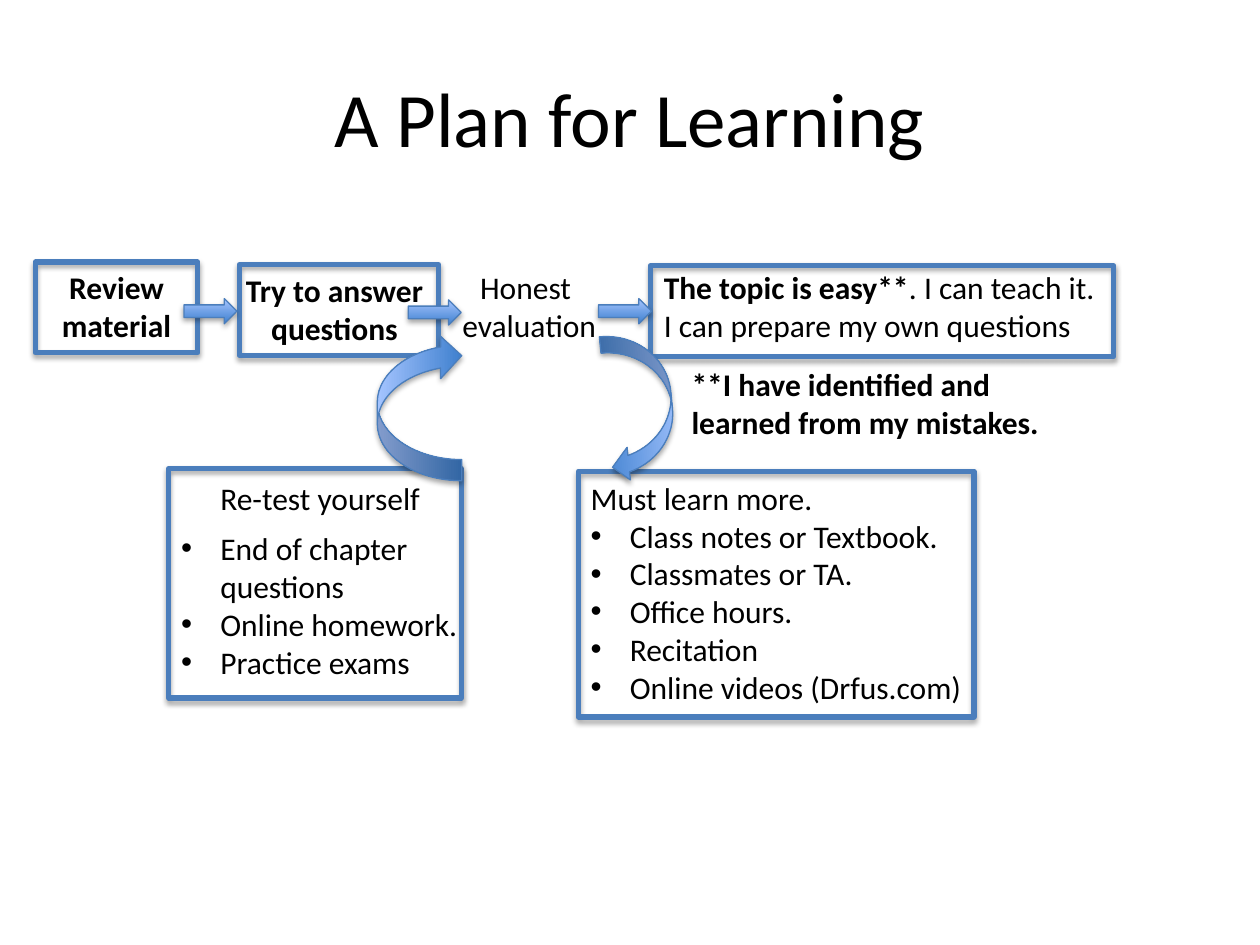
from lxml import etree
from pptx import Presentation
from pptx.dml.color import RGBColor
from pptx.enum.shapes import MSO_SHAPE
from pptx.enum.text import MSO_ANCHOR, MSO_AUTO_SIZE, PP_ALIGN
from pptx.oxml import parse_xml
from pptx.oxml.ns import nsdecls, qn
from pptx.util import Inches, Pt

RECTANGLE = MSO_SHAPE.RECTANGLE
RIGHT_ARROW = MSO_SHAPE.RIGHT_ARROW
CURVED_ARROW = MSO_SHAPE.CURVED_DOWN_ARROW
MIDDLE, TOP = MSO_ANCHOR.MIDDLE, MSO_ANCHOR.TOP
FIT_SHAPE, NO_FIT = MSO_AUTO_SIZE.SHAPE_TO_FIT_TEXT, MSO_AUTO_SIZE.NONE
LEFT, CENTER = PP_ALIGN.LEFT, PP_ALIGN.CENTER

COLORS = {"text": "000000", "line": "4B7EBC", "dark": "3F80CE", "light": "A4C4FF", "shadow": "000000"}
COLUMNS, ROWS = 100, 75
BULLET = "•"
HANGING = Inches(0.31)

deck = Presentation()
deck.slide_width, deck.slide_height = Inches(10), Inches(7.5)
column, row = deck.slide_width / COLUMNS, deck.slide_height / ROWS
page = deck.slides.add_slide(deck.slide_layouts[6])


def on_grid(left, top, width, height):
    return round(left * column), round(top * row), round(width * column), round(height * row)


def add_styled_shape(kind, place, line_width, gradient=False, rotation=0):
    shape = page.shapes.add_shape(kind, *on_grid(*place))
    shape.rotation = rotation
    shape.line.color.rgb = RGBColor.from_string(COLORS["line"])
    shape.line.width = Pt(line_width)
    if gradient:
        shape.fill.gradient()
        shape.fill.gradient_angle = 90
        for stop, name in zip(shape.fill.gradient_stops, ("dark", "light")):
            stop.color.rgb = RGBColor.from_string(COLORS[name])
    else:
        shape.fill.background()
    shape._element.spPr.append(parse_xml(
        f'<a:effectLst {nsdecls("a")}>'
        f'<a:outerShdw blurRad="{Pt(3.1)}" dist="{Pt(1.8)}" dir="5400000" rotWithShape="0">'
        f'<a:srgbClr val="{COLORS["shadow"]}"><a:alpha val="35000"/></a:srgbClr>'
        '</a:outerShdw></a:effectLst>'))


# Each text: place, frame format, alignment, size, paragraphs of (wording, bold) spans.
wrapped = {"word_wrap": True, "auto_size": FIT_SHAPE, "vertical_anchor": TOP}
unwrapped = {**wrapped, "word_wrap": False}
title_frame = {"word_wrap": True, "auto_size": NO_FIT, "vertical_anchor": MIDDLE}
texts = [
    ((5, 3, 90, 12.5), title_frame, CENTER, 44, [[("A Plan for Learning", False)]]),
    ((2.8, 20.8, 12.9, 7.1), wrapped, CENTER, 18, [[("Review material", True)]]),
    ((17.8, 21, 17.5, 7.1), wrapped, CENTER, 18, [[("Try to answer questions", True)]]),
    ((35.6, 20.8, 12.8, 7.1), unwrapped, CENTER, 18,
     [[("Honest ", False)], [("evaluation", False)]]),
    ((51.7, 20.8, 36.7, 7.1), unwrapped, LEFT, 18,
     [[("The topic is easy**", True), (". I can teach it.", False)],
      [("I can prepare my own questions", False)]]),
    ((53.9, 28.5, 32.7, 7.1), wrapped, LEFT, 18,
     [[("**I have identified and learned from my mistakes.", True)]]),
    ((16.5, 37.5, 20.1, 4), wrapped, LEFT, 18, [[("Re-test yourself", False)]]),
    ((13.4, 41.5, 26.3, 13.1), wrapped, LEFT, 18,
     [[(BULLET + "End of chapter questions", False)],
      [(BULLET + "Online homework.", False)],
      [(BULLET + "Practice exams", False)]]),
    ((45.9, 37.5, 31.6, 19.2), unwrapped, LEFT, 18,
     [[("Must learn more.", False)],
      [(BULLET + "Class notes or Textbook.", False)],
      [(BULLET + "Classmates or TA.", False)],
      [(BULLET + "Office hours.", False)],
      [(BULLET + "Recitation", False)],
      [(BULLET + "Online videos (Drfus.com)", False)]]),
]
for place, frame_format, alignment, size, paragraphs in texts:
    frame = page.shapes.add_textbox(*on_grid(*place)).text_frame
    for name, value in frame_format.items():
        setattr(frame, name, value)
    for index, spans in enumerate(paragraphs):
        para = frame.add_paragraph() if index else frame.paragraphs[0]
        para.alignment = alignment
        if spans[0][0].startswith(BULLET):
            properties = para._p.get_or_add_pPr()
            properties.set("marL", str(HANGING))
            properties.set("indent", str(-HANGING))
            etree.SubElement(properties, qn("a:buFont")).set("typeface", "Arial")
            etree.SubElement(properties, qn("a:buChar")).set("char", BULLET)
        for wording, bold in spans:
            span = para.add_run()
            span.text = wording.removeprefix(BULLET)
            for name, value in {"name": "Calibri", "size": Pt(size), "bold": bold}.items():
                setattr(span.font, name, value)
            span.font.color.rgb = RGBColor.from_string(COLORS["text"])

frames = [
    (2.8, 20.8, 12.9, 7.2),
    (19, 21, 15.8, 7.2),
    (51.6, 21.1, 36.8, 7.2),
    (45.9, 37.4, 31.4, 19.5),
    (13.4, 37.2, 23.2, 18.2),
]
for place in frames:
    add_styled_shape(RECTANGLE, place, 3)

for place, rotation in [((44.9, 29.7, 11.7, 5.2), 84.2), ((27.5, 29, 11.6, 6.7), 270)]:
    add_styled_shape(CURVED_ARROW, place, 0.75, True, rotation)

for left, top in [(47.5, 23.7), (32.4, 23.8), (14.6, 23.7)]:
    add_styled_shape(RIGHT_ARROW, (left, top, 4.2, 2), 0.75, True)

deck.save("out.pptx")
